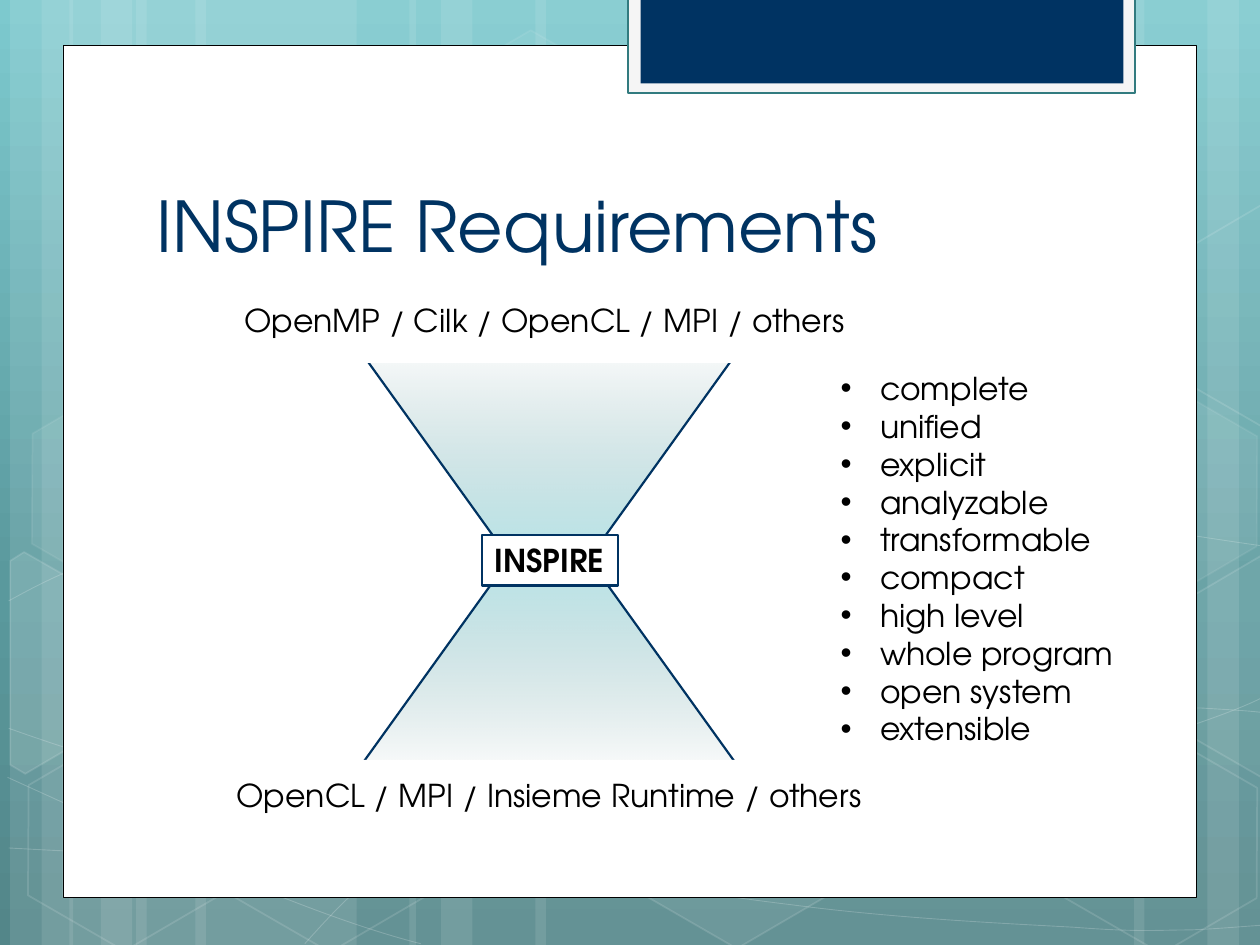
from math import cos, radians, sin

from lxml.etree import SubElement
from pptx import Presentation
from pptx.dml.color import RGBColor
from pptx.enum.shapes import MSO_SHAPE as SHAPE
from pptx.enum.text import MSO_ANCHOR as ANCHOR, PP_ALIGN as ALIGN
from pptx.oxml.ns import qn
from pptx.util import Pt

# Content
TITLE = "INSPIRE Requirements"
INPUTS = "OpenMP / Cilk / OpenCL / MPI / others"
OUTPUTS = "OpenCL / MPI / Insieme Runtime / others"
CORE = "INSPIRE"
REQUIREMENTS = ["complete", "unified", "explicit", "analyzable", "transformable",
                "compact", "high level", "whole program", "open system", "extensible"]

# Style
FONT = "TeX Gyre Adventor"
NAVY, WHITE, BLACK = "003362", "FFFFFF", "000000"
BACKDROP = [(0, "7DC9CE", 100), (62, "5A999D", 100), (100, "538689", 100)]
FUNNEL = [(0, "7DC9CE", 51), (100, "538689", 0)]
W, H = 720, 540
TILT = 30

# Backdrop: (left, width) of the light bands
TRIPLE = [(77.8, 126), (5.8, 36), (23.8, 60)]
BANDS = (TRIPLE + [(x + 33.8, w) for x, w in TRIPLE]
         + [(528, 126), (690, 36), (648, 60), (306, 222), (234, 36), (252, 60)])

# Start point, then Bezier segments (two handles and an end) or line ends
CURVES = [
    [(5, 484.6),
     (43.9, 486.7, 82.8, 488.9, 136.8, 488.2), (190.8, 487.4, 257.8, 486, 329.8, 478.8),
     (401.8, 471.6, 504, 457.9, 570.2, 444.2), (635.8, 430.6, 703.4, 409, 725, 396.7)],
    [(5, 343.4),
     (25.9, 331.9, 46.8, 321.1, 87.1, 310.3), (128.2, 299.5, 186.5, 283.7, 249.8, 278.6),
     (313.9, 273.6, 391.7, 272.9, 470.9, 278.6), (550.1, 284.4, 681.8, 306.7, 725, 312.5)],
    [(4.3, 444.2), (91.4, 483.8, 177.8, 523.4, 240.5, 539.3)],
    [(5, 416.2),
     (27.4, 424.1, 50.4, 432, 92.2, 443.5), (133.9, 454.3, 196.6, 472.3, 257, 484.6),
     (316.8, 496.8, 392.4, 509.8, 452.2, 517), (511.9, 524.9, 576, 527.8, 614.2, 529.9),
     (651.6, 532.8, 661.7, 531.4, 680.4, 531.4), (699.1, 530.6, 712.1, 529.2, 725, 528.5)],
    [(174.2, 539.3),
     (187.2, 524.9, 200.2, 510.5, 217.4, 497.5), (234.7, 484.6, 259.2, 470.2, 279.4, 460.1),
     (299.5, 450, 311.8, 445.7, 338.4, 438.5), (364.3, 431.3, 412.6, 421.2, 437.8, 416.2),
     (463.7, 411.1, 467.3, 411.1, 489.6, 409.7), (511.9, 407.5, 547.2, 405.4, 571.7, 404.6),
     (596.9, 403.9, 637.9, 404.6, 637.9, 404.6), (686.2, 404.6),
     (699.1, 405.4, 711.4, 406.1, 717.8, 406.8), (724.3, 407.5, 722.2, 406.8, 724.3, 407.5)],
]

# Hexagons: left, top, fill opacity (None for no fill), line opacity
HEXAGONS = [(240.5, 25.9, 4, 8), (357.8, 424.1, 6, 12), (7.9, 425.5, None, 12),
            (10.1, 224.6, 7, 8), (125.3, 426.2, None, 12), (542.2, 326.2, 10, 12),
            (600.5, 427, None, 12), (600.5, 226.1, 7, 8)]

# Hexagons cut by the slide edge: centre, points, fill opacity
RIGHT_CUT = [(666.7, 349.2), (720.7, 317.5), (726.5, 321.1),
             (726.5, 441.4), (721.4, 444.2), (666.7, 412.6)]
CUT_HEXAGONS = [
    ((25.9, 385.2), [(5.8, 320.4), (13.7, 315.4), (69.1, 347),
                     (68.4, 410.4), (14.4, 442.1), (5.8, 437)], 10),
    ((709.2, 374.4), RIGHT_CUT, 4),
    ((709.2, 173.5), [(x, y - 200.4) for x, y in RIGHT_CUT], None),
]

prs = Presentation()
prs.slide_width, prs.slide_height = Pt(W), Pt(H)
s = prs.slides.add_slide(prs.slide_layouts[6])


def rgb(color):
    return RGBColor.from_string(color)


def solid(fill, color, alpha=100):
    fill.solid()
    fill.fore_color.rgb = rgb(color)
    if alpha < 100:
        clr = fill._xPr.find(".//" + qn("a:srgbClr"))
        SubElement(clr, qn("a:alpha"), val=str(alpha * 1000))


def gradient(fill, element, stops):
    """Top-to-bottom gradient with stops of (position, colour, opacity)."""
    fill.gradient()
    fill.gradient_angle = 270
    stop_list = element.find(".//" + qn("a:gsLst"))
    for old in list(stop_list):
        stop_list.remove(old)
    for pos, color, alpha in stops:
        gs = SubElement(stop_list, qn("a:gs"), pos=str(pos * 1000))
        clr = SubElement(gs, qn("a:srgbClr"), val=color)
        SubElement(clr, qn("a:alpha"), val=str(alpha * 1000))


def style(sp, fill=None, alpha=100, line=None, width=1, line_alpha=100):
    sp.shadow.inherit = False
    if fill:
        solid(sp.fill, fill, alpha)
    else:
        sp.fill.background()
    if line:
        solid(sp.line.fill, line, line_alpha)
        sp.line.width = Pt(width)
    else:
        sp.line.fill.background()
    return sp


def shape(kind, x, y, w, h, **look):
    return style(s.shapes.add_shape(kind, Pt(x), Pt(y), Pt(w), Pt(h)), **look)


def outline(points, close, **look):
    pts = [(Pt(x), Pt(y)) for x, y in points]
    builder = s.shapes.build_freeform(*pts[0])
    builder.add_line_segments(pts[1:], close=close)
    return style(builder.convert_to_shape(), **look)


def curve(start, segments, **look):
    """Outline through the segment ends, bent where a segment has handles."""
    sp = outline([start] + [seg[-2:] for seg in segments], False, **look)
    for step, seg in zip(list(sp._element.iter(qn("a:lnTo"))), segments):
        if len(seg) == 6:
            bend = SubElement(step.getparent(), qn("a:cubicBezTo"))
            for x, y in zip(seg[::2], seg[1::2]):
                SubElement(bend, qn("a:pt"), x=str(Pt(x) - sp.left), y=str(Pt(y) - sp.top))
            step.getparent().replace(step, bend)


def turn(points, centre, degrees):
    cx, cy = centre
    c, n = cos(radians(degrees)), sin(radians(degrees))
    return [(cx + (x - cx) * c - (y - cy) * n, cy + (x - cx) * n + (y - cy) * c)
            for x, y in points]


def write(sp, lines, size=18, color=BLACK, bold=False, align=ALIGN.LEFT,
          anchor=ANCHOR.TOP, wrap=True, bullet=None):
    tf = sp.text_frame
    tf.word_wrap, tf.vertical_anchor = wrap, anchor
    for i, line in enumerate(lines):
        p = tf.add_paragraph() if i else tf.paragraphs[0]
        p.alignment = align
        if bullet:
            pPr = p._p.get_or_add_pPr()
            pPr.set("marL", str(Pt(22.5)))
            pPr.set("indent", str(-Pt(22.5)))
            SubElement(pPr, qn("a:buFont"), typeface="Arial")
            SubElement(pPr, qn("a:buChar"), char=bullet)
        r = p.add_run()
        r.text = line
        r.font.name, r.font.size, r.font.bold = FONT, Pt(size), bold
        r.font.color.rgb = rgb(color)


def text(lines, x, y, w, h, **form):
    write(s.shapes.add_textbox(Pt(x), Pt(y), Pt(w), Pt(h)), lines, **form)


# Backdrop
gradient(s.background.fill, s._element, BACKDROP)
for x, w in BANDS:
    shape(SHAPE.RECTANGLE, x, 0, w, H, fill=WHITE, alpha=10)
for start, *segments in CURVES:
    curve(start, segments, line=WHITE, width=0.5, line_alpha=20)
for x, y, alpha, line_alpha in HEXAGONS:
    sp = shape(SHAPE.HEXAGON, x, y, 126, 109.4, fill=alpha and WHITE, alpha=alpha,
               line=WHITE, line_alpha=line_alpha)
    sp.adjustments[0] = 0.285
    sp.rotation = TILT
for centre, points, alpha in CUT_HEXAGONS:
    sp = outline(turn(points, centre, -TILT), True, fill=alpha and WHITE, alpha=alpha,
                 line=WHITE, line_alpha=12)
    sp.rotation = TILT

# Panel and tab
shape(SHAPE.RECTANGLE, 36, 26, 648, 487, fill=WHITE, line=BLACK, width=0.5)
shape(SHAPE.RECTANGLE, 359, -1.4, 289.6, 54.7, fill="F5F5F5", line="327B7F", width=1.25)
shape(SHAPE.RECTANGLE, 366, -1.4, 276, 49, fill=NAVY)

# Hourglass: two funnels, each with its wide edge hidden by a white strip
for y, rotation, strip_y in [(332.6, 0, 434.2), (193, 180, 172.8)]:
    sp = shape(SHAPE.TRAPEZOID, 200.4, y, 226.8, 113, line=NAVY, width=1.25)
    sp.adjustments[0] = 0.719
    sp.rotation = rotation
    gradient(sp.fill, sp._element, FUNNEL)
    shape(SHAPE.RECTANGLE, 121, strip_y, 385.2, 34.6, fill=WHITE)
core = shape(SHAPE.RECTANGLE, 275.5, 305.6, 77.6, 29, fill=WHITE, line=NAVY, width=1.25)
write(core, [CORE], bold=True, wrap=False)

# Texts
text([TITLE], 82.4, 65.8, 553, 90, size=40, color=NAVY, anchor=ANCHOR.BOTTOM)
text([INPUTS], 132.5, 168.5, 374.4, 29)
text([OUTPUTS], 121.2, 440, 385.2, 29, align=ALIGN.CENTER)
text(REQUIREMENTS, 473.3, 207.4, 172.8, 225.4, wrap=False, bullet="•")

prs.save("out.pptx")
